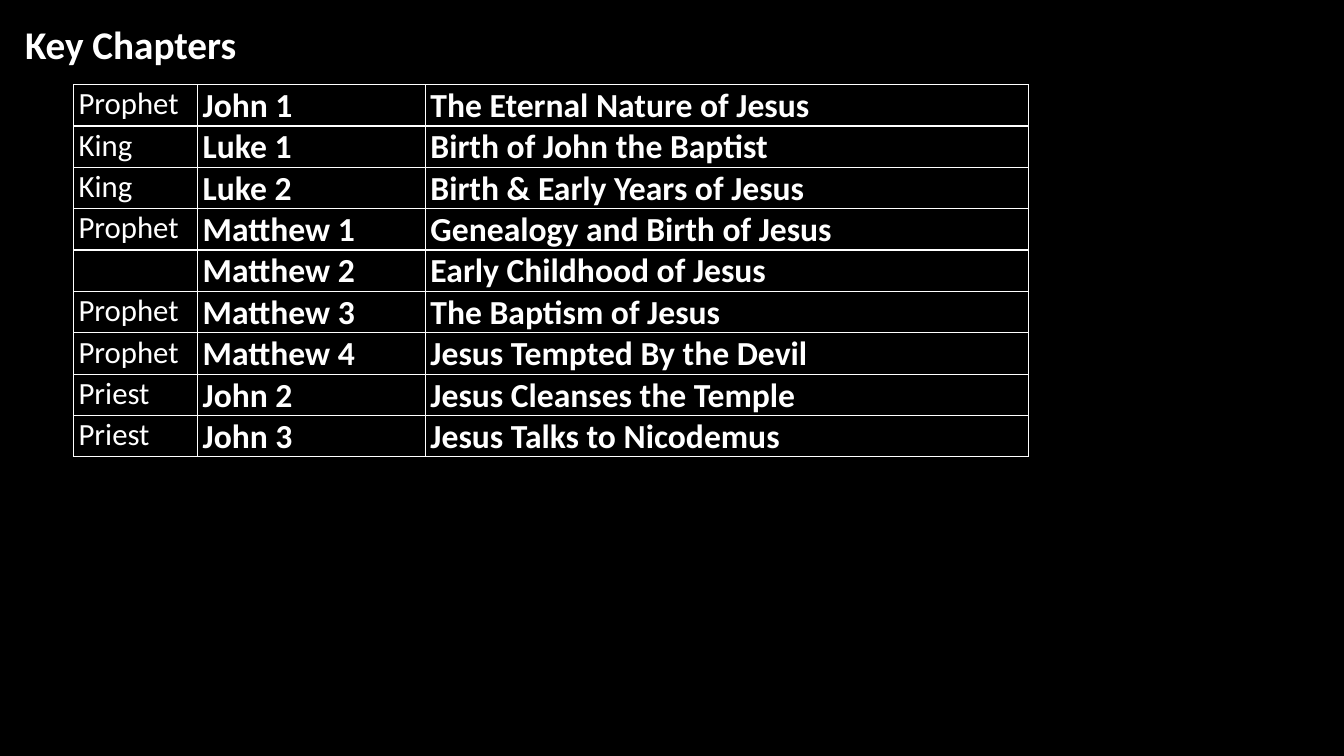
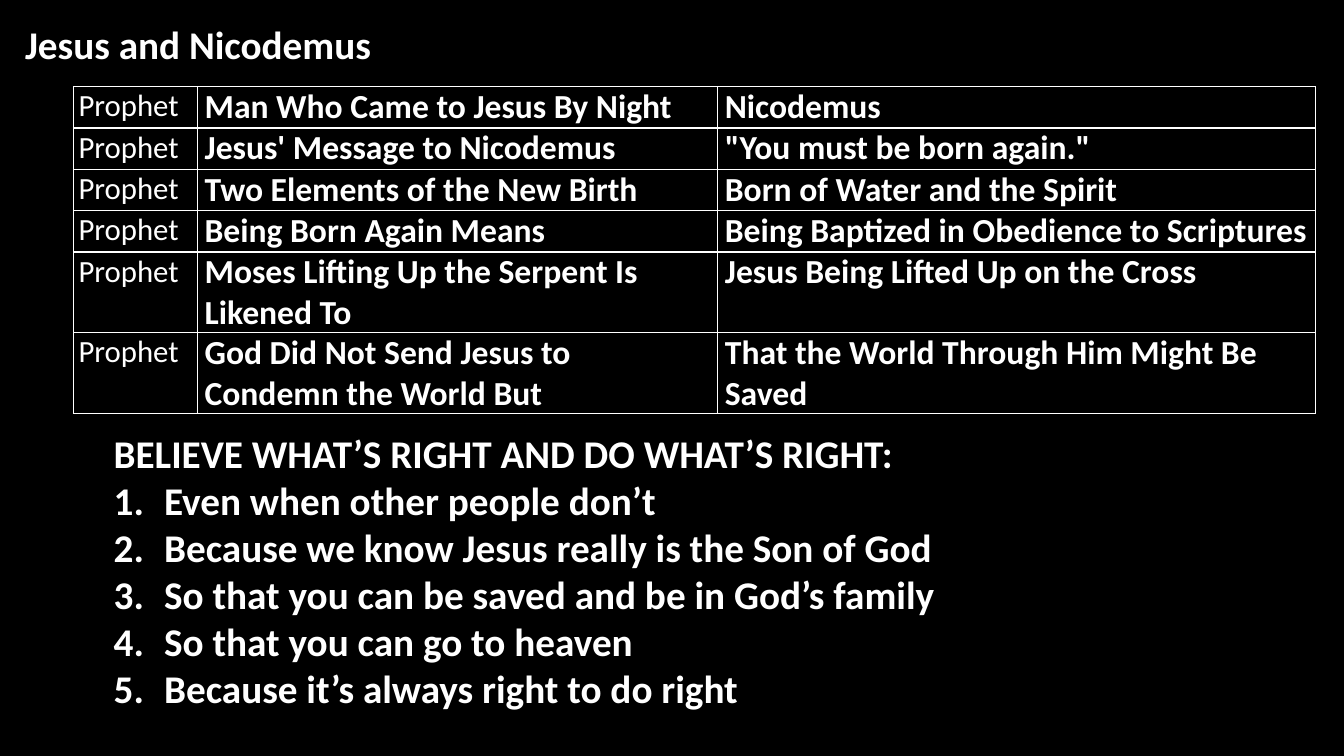
"""Build two Bible study slides with bordered tables and a numbered list."""
from dataclasses import dataclass
from typing import NamedTuple

from lxml.etree import SubElement
from pptx import Presentation
from pptx.dml.color import RGBColor
from pptx.enum.text import MSO_ANCHOR, MSO_AUTO_SIZE
from pptx.oxml.ns import qn
from pptx.slide import Slide
from pptx.table import _Cell as Cell
from pptx.text.text import _Paragraph as Paragraph
from pptx.util import Inches, Pt


@dataclass(frozen=True)
class Theme:
    font: str = "Calibri"
    background: RGBColor = RGBColor(0, 0, 0)
    ink: RGBColor = RGBColor(255, 255, 255)
    heading: int = 28
    answer: int = 24
    role: int = 22
    border: int = 1


class Margins(NamedTuple):
    left: float
    top: float
    right: float
    bottom: float


@dataclass(frozen=True)
class TableSpec:
    top: float
    widths: tuple[float, ...]
    answer_margins: Margins
    rows: tuple[tuple[str, ...], ...]


THEME = Theme()
TABLE_LEFT = 0.73
ROW_HEIGHT = 0.41
NARROW = Margins(0.05, 0.01, 0.01, 0)
WIDE = Margins(0.07, 0, 0.07, 0)

CHAPTERS = TableSpec(0.84, (1.23, 2.26, 5.98), NARROW, (
    ("Prophet", "John 1", "The Eternal Nature of Jesus"),
    ("King", "Luke 1", "Birth of John the Baptist"),
    ("King", "Luke 2", "Birth & Early Years of Jesus"),
    ("Prophet", "Matthew 1", "Genealogy and Birth of Jesus"),
    ("", "Matthew 2", "Early Childhood of Jesus"),
    ("Prophet", "Matthew 3", "The Baptism of Jesus"),
    ("Prophet", "Matthew 4", "Jesus Tempted By the Devil"),
    ("Priest", "John 2", "Jesus Cleanses the Temple"),
    ("Priest", "John 3", "Jesus Talks to Nicodemus"),
))

NICODEMUS = TableSpec(0.86, (1.23, 5.16, 5.93), WIDE, (
    ("Prophet", "Man Who Came to Jesus By Night", "Nicodemus"),
    ("Prophet", "Jesus' Message to Nicodemus", '"You must be born again."'),
    ("Prophet", "Two Elements of the New Birth", "Born of Water and the Spirit"),
    ("Prophet", "Being Born Again Means", "Being Baptized in Obedience to Scriptures"),
    ("Prophet", "Moses Lifting Up the Serpent Is Likened To",
     "Jesus Being Lifted Up on the Cross"),
    ("Prophet", "God Did Not Send Jesus to Condemn the World But",
     "That the World Through Him Might Be Saved"),
))

LESSON = "BELIEVE WHAT’S RIGHT AND DO WHAT’S RIGHT:"
REASONS = (
    "Even when other people don’t",
    "Because we know Jesus really is the Son of God",
    "So that you can be saved and be in God’s family",
    "So that you can go to heaven",
    "Because it’s always right to do right",
)


def style_runs(p: Paragraph, size: int, bold: bool) -> None:
    for r in p.runs:
        r.font.name = THEME.font
        r.font.size = Pt(size)
        r.font.bold = bold
        r.font.color.rgb = THEME.ink


def number(p: Paragraph) -> None:
    pPr = p._p.get_or_add_pPr()
    pPr.set("marL", str(Inches(0.5)))
    pPr.set("indent", str(Inches(-0.5)))
    SubElement(pPr, qn("a:buFont"), typeface="+mj-lt")
    SubElement(pPr, qn("a:buAutoNum"), type="arabicPeriod")


def add_text(s: Slide, left: float, top: float, width: float, height: float,
             heading: str, items: tuple[str, ...] = ()) -> None:
    sp = s.shapes.add_textbox(Inches(left), Inches(top), Inches(width), Inches(height))
    tf = sp.text_frame
    tf.word_wrap = True
    tf.auto_size = MSO_AUTO_SIZE.SHAPE_TO_FIT_TEXT
    tf.text = heading
    for item in items:
        p = tf.add_paragraph()
        p.text = item
        number(p)
    for p in tf.paragraphs:
        style_runs(p, THEME.heading, True)


def add_borders(cell: Cell) -> None:
    tcPr = cell._tc.get_or_add_tcPr()
    for side in ("lnL", "lnR", "lnT", "lnB"):
        ln = SubElement(tcPr, qn(f"a:{side}"), w=str(Pt(THEME.border)))
        fill = SubElement(ln, qn("a:solidFill"))
        SubElement(fill, qn("a:srgbClr"), val=str(THEME.ink))


def fill_cell(cell: Cell, text: str, size: int, bold: bool, margins: Margins) -> None:
    cell.text_frame.text = text
    style_runs(cell.text_frame.paragraphs[0], size, bold)
    cell.margin_left = Inches(margins.left)
    cell.margin_top = Inches(margins.top)
    cell.margin_right = Inches(margins.right)
    cell.margin_bottom = Inches(margins.bottom)
    cell.vertical_anchor = MSO_ANCHOR.TOP
    add_borders(cell)
    cell.fill.background()


def add_table(s: Slide, spec: TableSpec) -> None:
    count = len(spec.rows)
    table = s.shapes.add_table(
        count, len(spec.widths), Inches(TABLE_LEFT), Inches(spec.top),
        Inches(sum(spec.widths)), Inches(ROW_HEIGHT * count)).table
    table.first_row = table.horz_banding = False
    for column, width in zip(table.columns, spec.widths):
        column.width = Inches(width)
    for row, texts in zip(table.rows, spec.rows):
        row.height = Inches(ROW_HEIGHT)
        role, *answers = row.cells
        fill_cell(role, texts[0], THEME.role, False, NARROW)
        for cell, text in zip(answers, texts[1:]):
            fill_cell(cell, text, THEME.answer, True, spec.answer_margins)


def add_slide(prs: Presentation, title: str, spec: TableSpec) -> Slide:
    s = prs.slides.add_slide(prs.slide_layouts[6])
    s.background.fill.solid()
    s.background.fill.fore_color.rgb = THEME.background
    add_text(s, 0.15, 0.15, 11.66, 0.57, title)
    add_table(s, spec)
    return s


def main() -> None:
    prs = Presentation()
    prs.slide_width = Inches(13.33)
    prs.slide_height = Inches(7.5)
    add_slide(prs, "Key Chapters", CHAPTERS)
    s = add_slide(prs, "Jesus and Nicodemus", NICODEMUS)
    add_text(s, 1.03, 4.21, 12.1, 2.93, LESSON, REASONS)
    prs.save("out.pptx")


if __name__ == "__main__":
    main()
